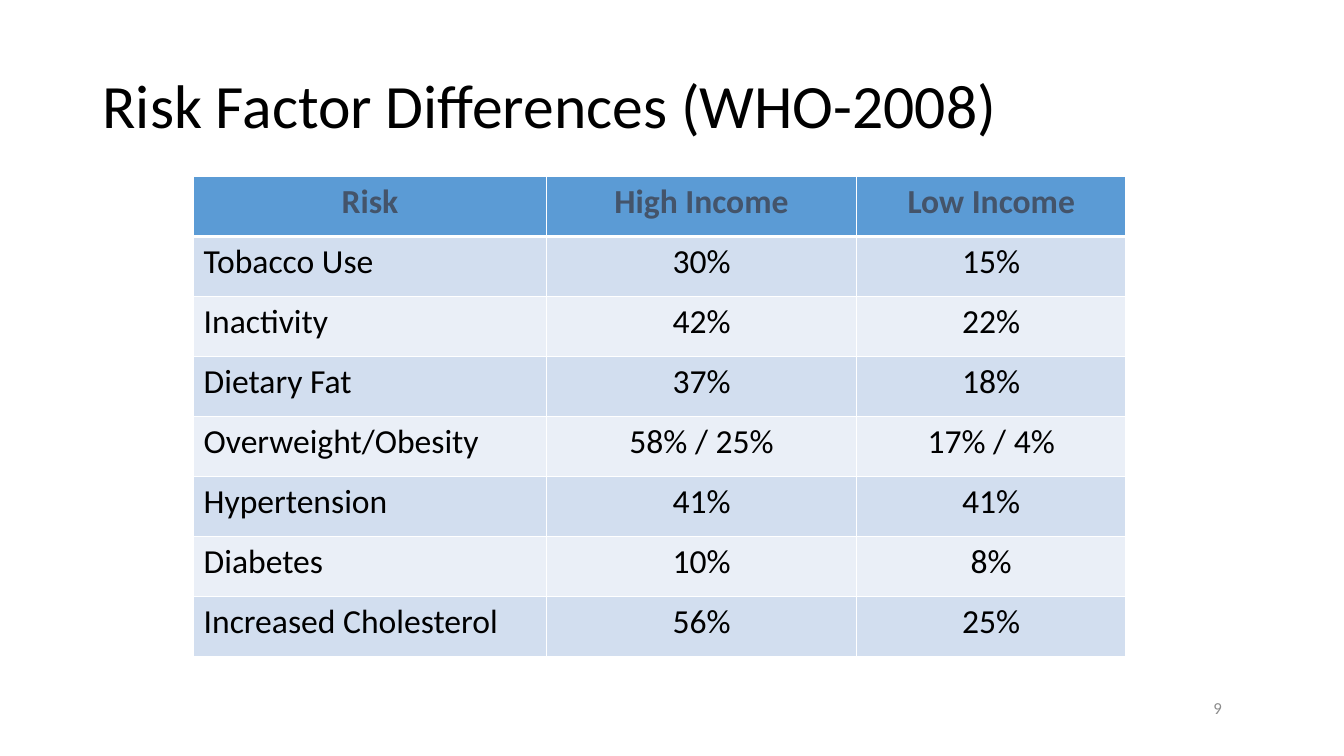
from lxml.etree import SubElement
from pptx import Presentation
from pptx.dml.color import RGBColor
from pptx.enum.text import MSO_ANCHOR, PP_ALIGN
from pptx.oxml.ns import qn
from pptx.util import Cm, Pt

FONT = "Calibri"
COLORS = {
    "text": "000000",
    "header_text": "44546A",
    "header_fill": "5B9BD5",
    "odd_row": "D2DEEF",
    "even_row": "EAEFF7",
    "border": "FFFFFF",
    "page_number": "8C8C8C",
}
RISK_FACTORS = [
    ("Risk", "High Income", "Low Income"),
    ("Tobacco Use", "30%", "15%"),
    ("Inactivity", "42%", "22%"),
    ("Dietary Fat", "37%", "18%"),
    ("Overweight/Obesity", "58% / 25%", "17% / 4%"),
    ("Hypertension", "41%", "41%"),
    ("Diabetes", "10%", "8%"),
    ("Increased Cholesterol", "56%", "25%"),
]
COLUMN_WIDTHS = (8.89, 7.82, 6.78)  # cm


def rgb(name):
    return RGBColor.from_string(COLORS[name])


def format_text(frame, size, color, bold=False, align=PP_ALIGN.LEFT):
    for paragraph in frame.paragraphs:
        paragraph.alignment = align
        for run in paragraph.runs:
            run.font.name = FONT
            run.font.size = Pt(size)
            run.font.bold = bold
            run.font.color.rgb = rgb(color)


def set_borders(cell, top, bottom):
    """Draw the four cell edges; widths are in points."""
    properties = cell._tc.get_or_add_tcPr()
    for edge, width in (("lnL", 1), ("lnR", 1), ("lnT", top), ("lnB", bottom)):
        line = SubElement(properties, qn(f"a:{edge}"), w=str(Pt(width)))
        fill = SubElement(line, qn("a:solidFill"))
        SubElement(fill, qn("a:srgbClr"), val=COLORS["border"])


def place_title(slide, left, top, width, height):
    title = slide.shapes.title
    title.left, title.top, title.width, title.height = left, top, width, height
    frame = title.text_frame
    frame.text = "Risk Factor Differences (WHO-2008)"
    frame.vertical_anchor = MSO_ANCHOR.MIDDLE
    frame.paragraphs[0].line_spacing = 0.9
    format_text(frame, 44, "text")


def add_risk_table(slide, left, top, width, height):
    table = slide.shapes.add_table(
        len(RISK_FACTORS), len(COLUMN_WIDTHS), left, top, width, height
    ).table
    for column, column_width in zip(table.columns, COLUMN_WIDTHS):
        column.width = Cm(column_width)

    for row_index, values in enumerate(RISK_FACTORS):
        is_header = row_index == 0
        if is_header:
            row_fill = "header_fill"
        else:
            row_fill = "odd_row" if row_index % 2 else "even_row"
        for column_index, value in enumerate(values):
            cell = table.cell(row_index, column_index)
            cell.text_frame.text = value
            centred = is_header or column_index > 0
            format_text(
                cell.text_frame,
                24,
                "header_text" if is_header else "text",
                bold=is_header,
                align=PP_ALIGN.CENTER if centred else PP_ALIGN.LEFT,
            )
            # The rule under the header is heavier
            set_borders(cell, 3 if row_index == 1 else 1, 3 if is_header else 1)
            cell.fill.solid()
            cell.fill.fore_color.rgb = rgb(row_fill)


def add_page_number(slide, left, top, width, height):
    frame = slide.shapes.add_textbox(left, top, width, height).text_frame
    frame.word_wrap = True
    frame.vertical_anchor = MSO_ANCHOR.MIDDLE
    frame.text = "9"
    format_text(frame, 12, "page_number")


def main():
    presentation = Presentation()
    presentation.slide_width = Cm(33.87)
    presentation.slide_height = Cm(19.05)
    slide = presentation.slides.add_slide(presentation.slide_layouts[5])

    place_title(slide, Cm(2.33), Cm(1.01), Cm(29.21), Cm(3.43))
    add_risk_table(slide, Cm(4.88), Cm(4.45), Cm(sum(COLUMN_WIDTHS)), Cm(12.1))
    add_page_number(slide, Cm(30.33), Cm(17.32), Cm(1.22), Cm(1.02))

    presentation.save("out.pptx")


if __name__ == "__main__":
    main()
